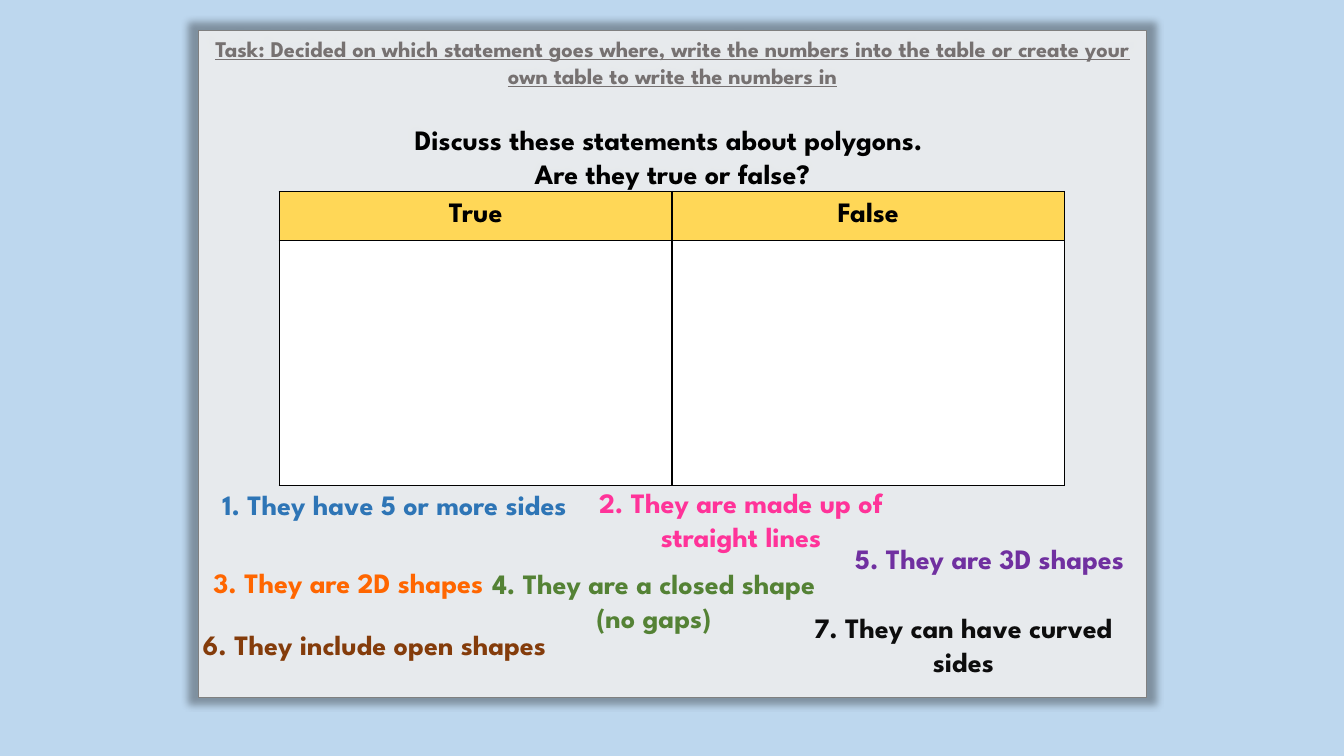
"""Build a true-or-false sorting slide about polygons."""
from dataclasses import dataclass

from lxml import etree
from pptx import Presentation
from pptx import oxml
from pptx.dml import color
from pptx.enum import shapes, text
from pptx.util import Inches, Pt


@dataclass(frozen=True)
class Theme:
    font: str = "League Spartan"
    task_size: int = 16
    body_size: int = 20
    sky: str = "BDD7EE"
    white: str = "FFFFFF"
    black: str = "000000"
    outline: str = "808080"
    task: str = "767171"
    header: str = "FFD757"
    blue: str = "2E75B6"
    pink: str = "FF3399"
    orange: str = "FF6600"
    green: str = "548235"
    purple: str = "7030A0"
    brown: str = "843C0B"
    ink: str = "0D0D0D"


theme = Theme()
rgb = color.RGBColor.from_string
DRAWING = "http://schemas.openxmlformats.org/drawingml/2006/main"


def write(paragraph, words, size=theme.body_size, ink=theme.black, underline=False, before=0):
    paragraph.alignment = text.PP_ALIGN.CENTER
    paragraph.space_before = Pt(before)
    run = paragraph.add_run()
    run.text = words
    run.font.name = theme.font
    run.font.size = Pt(size)
    run.font.bold = True
    run.font.underline = underline
    run.font.color.rgb = rgb(ink)


deck = Presentation()
deck.slide_width, deck.slide_height = Inches(13.33), Inches(7.5)
slide = deck.slides.add_slide(deck.slide_layouts[6])
slide.background.fill.solid()
slide.background.fill.fore_color.rgb = rgb(theme.sky)

panel = slide.shapes.add_shape(
    shapes.MSO_SHAPE.RECTANGLE, Inches(1.97), Inches(0.3), Inches(9.4), Inches(6.62))
panel.fill.solid()
panel.fill.fore_color.rgb = rgb(theme.white)
panel.line.color.rgb = rgb(theme.outline)
panel.line.width = Pt(1)
panel.shadow.inherit = False
panel_properties = panel.element.spPr
panel_white = panel_properties.find(f"{{{DRAWING}}}solidFill/{{{DRAWING}}}srgbClr")
etree.SubElement(panel_white, f"{{{DRAWING}}}alpha", val="82000")
panel_properties.find(f"{{{DRAWING}}}effectLst").append(oxml.parse_xml(
    f'<a:outerShdw xmlns:a="{DRAWING}" blurRad="63500" sx="102000" sy="102000" '
    f'algn="ctr" rotWithShape="0"><a:srgbClr val="{theme.black}">'
    '<a:alpha val="40000"/></a:srgbClr></a:outerShdw>'))

instructions = panel.text_frame
instructions.word_wrap = True
instructions.vertical_anchor = text.MSO_ANCHOR.TOP
write(instructions.paragraphs[0],
      "Task: Decided on which statement goes where, write the numbers into the table "
      "or create your own table to write the numbers in",
      size=theme.task_size, ink=theme.task, underline=True)
write(instructions.add_paragraph(), "Discuss these statements about polygons. ", before=24)
write(instructions.add_paragraph(), "Are they true or false?")

answers = slide.shapes.add_table(
    2, 2, Inches(2.77), Inches(1.9), Inches(7.79), Inches(2.92)).table
answers.rows[0].height = Inches(0.49)
answers.rows[1].height = Inches(2.43)
for cell in answers.iter_cells():
    cell_properties = cell._tc.get_or_add_tcPr()
    for edge in ("lnL", "lnR", "lnT", "lnB"):
        cell_properties.append(oxml.parse_xml(
            f'<a:{edge} xmlns:a="{DRAWING}" w="12700"><a:solidFill>'
            f'<a:srgbClr val="{theme.black}"/></a:solidFill></a:{edge}>'))
    cell.fill.solid()
    cell.fill.fore_color.rgb = rgb(theme.white)
for column, verdict in enumerate(("True", "False")):
    heading = answers.cell(0, column)
    heading.fill.fore_color.rgb = rgb(theme.header)
    heading.vertical_anchor = text.MSO_ANCHOR.MIDDLE
    write(heading.text_frame.paragraphs[0], verdict)

statements = (
    ("4. They are a closed shape (no gaps)", 4.78, 5.57, 3.41, 0.77, theme.green),
    ("2. They are made up of straight lines", 5.68, 4.77, 3.34, 0.77, theme.pink),
    ("3. They are 2D shapes", 1.75, 5.56, 3.41, 0.44, theme.orange),
    ("7. They can have curved sides", 7.85, 6.01, 3.41, 0.77, theme.ink),
    ("5. They are 3D shapes", 8.11, 5.32, 3.41, 0.44, theme.purple),
    ("6. They include open shapes", 1.75, 6.18, 3.93, 0.77, theme.brown),
    ("1. They have 5 or more sides", 2.01, 4.79, 3.81, 0.44, theme.blue),
)
for words, left, top, width, height, ink in statements:
    statement = slide.shapes.add_textbox(
        Inches(left), Inches(top), Inches(width), Inches(height)).text_frame
    statement.word_wrap = True
    statement.auto_size = text.MSO_AUTO_SIZE.SHAPE_TO_FIT_TEXT
    write(statement.paragraphs[0], words, ink=ink)

deck.save("out.pptx")
